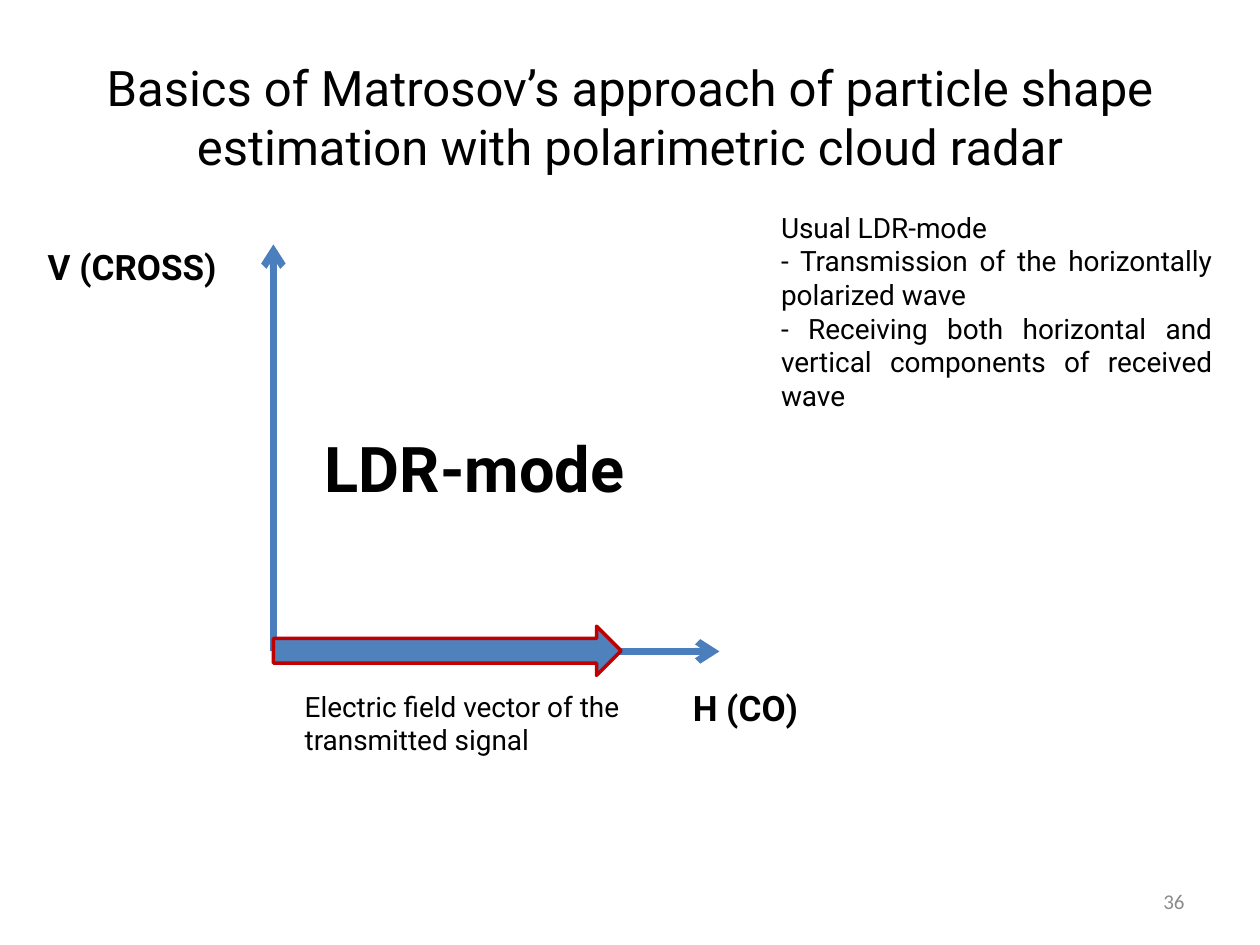
"""Build a slide on the LDR mode of a polarimetric cloud radar."""
from lxml import etree
from pptx import Presentation
from pptx.dml.color import RGBColor
from pptx.enum.shapes import MSO_CONNECTOR, MSO_SHAPE
from pptx.enum.text import MSO_ANCHOR, PP_ALIGN
from pptx.oxml.ns import qn
from pptx.util import Pt

STRAIGHT = MSO_CONNECTOR.STRAIGHT
RIGHT_ARROW = MSO_SHAPE.RIGHT_ARROW
TOP, MIDDLE = MSO_ANCHOR.TOP, MSO_ANCHOR.MIDDLE
LEFT, CENTER, RIGHT, JUSTIFY = PP_ALIGN.LEFT, PP_ALIGN.CENTER, PP_ALIGN.RIGHT, PP_ALIGN.JUSTIFY

THEME = {
    "font": "Roboto", "number_font": "Calibri",
    "text": RGBColor.from_string("000000"),
    "muted": RGBColor.from_string("8C8C8C"),
    "axis": RGBColor.from_string("4B7EBC"),
    "vector": RGBColor.from_string("4F81BD"),
    "outline": RGBColor.from_string("C00000"),
    "title": 28, "mode": 36, "label": 20, "body": 16, "number": 12,
}
PX = 9144


def px(*lengths):
    return [n * PX for n in lengths]


def add_text(s, box, text, size, bold=False, align=LEFT, anchor=TOP, font="font", color="text"):
    tf = s.shapes.add_textbox(*px(*box)).text_frame
    tf.word_wrap = True
    tf.vertical_anchor = anchor
    tf.text = text
    for p in tf.paragraphs:
        p.alignment = align
        for r in p.runs:
            r.font.name = THEME[font]
            r.font.size = Pt(THEME[size])
            r.font.bold = bold
            r.font.color.rgb = THEME[color]


prs = Presentation()
prs.slide_width, prs.slide_height = px(1000, 750)
s = prs.slides.add_slide(prs.slide_layouts[6])

add_text(s, (50, 30, 900, 125),
         "Basics of Matrosov’s approach of particle shape estimation with polarimetric cloud radar",
         "title", align=CENTER, anchor=MIDDLE)

origin = (217, 517)
for tip in ((217, 194), (571, 517)):
    axis = s.shapes.add_connector(STRAIGHT, *px(*origin, *tip))
    axis.line.color.rgb = THEME["axis"]
    axis.line.width = Pt(4)
    etree.SubElement(axis.line._get_or_add_ln(), qn("a:tailEnd"), type="arrow")
    etree.SubElement(axis._element.spPr, qn("a:effectLst"))

add_text(s, (540, 540, 117, 44), "H (CO)", "label", bold=True)
add_text(s, (28, 190, 189, 44), "V (CROSS)", "label", bold=True)

vector = s.shapes.add_shape(RIGHT_ARROW, *px(217, 497, 276, 39))
vector.shadow.inherit = False
vector.fill.solid()
vector.fill.fore_color.rgb = THEME["vector"]
vector.line.color.rgb = THEME["outline"]
vector.line.width = Pt(2)

add_text(s, (232, 542, 276, 64), "Electric field vector of the transmitted signal", "body")
add_text(s, (248, 336, 292, 71), "LDR-mode", "mode", bold=True)
add_text(s, (610, 162, 362, 172),
         "Usual LDR-mode\n"
         "- Transmission of the horizontally polarized wave\n"
         "- Receiving both horizontal and vertical components of received wave",
         "body", align=JUSTIFY)
add_text(s, (717, 695, 233, 40), "36", "number", align=RIGHT, anchor=MIDDLE,
         font="number_font", color="muted")

prs.save("out.pptx")
